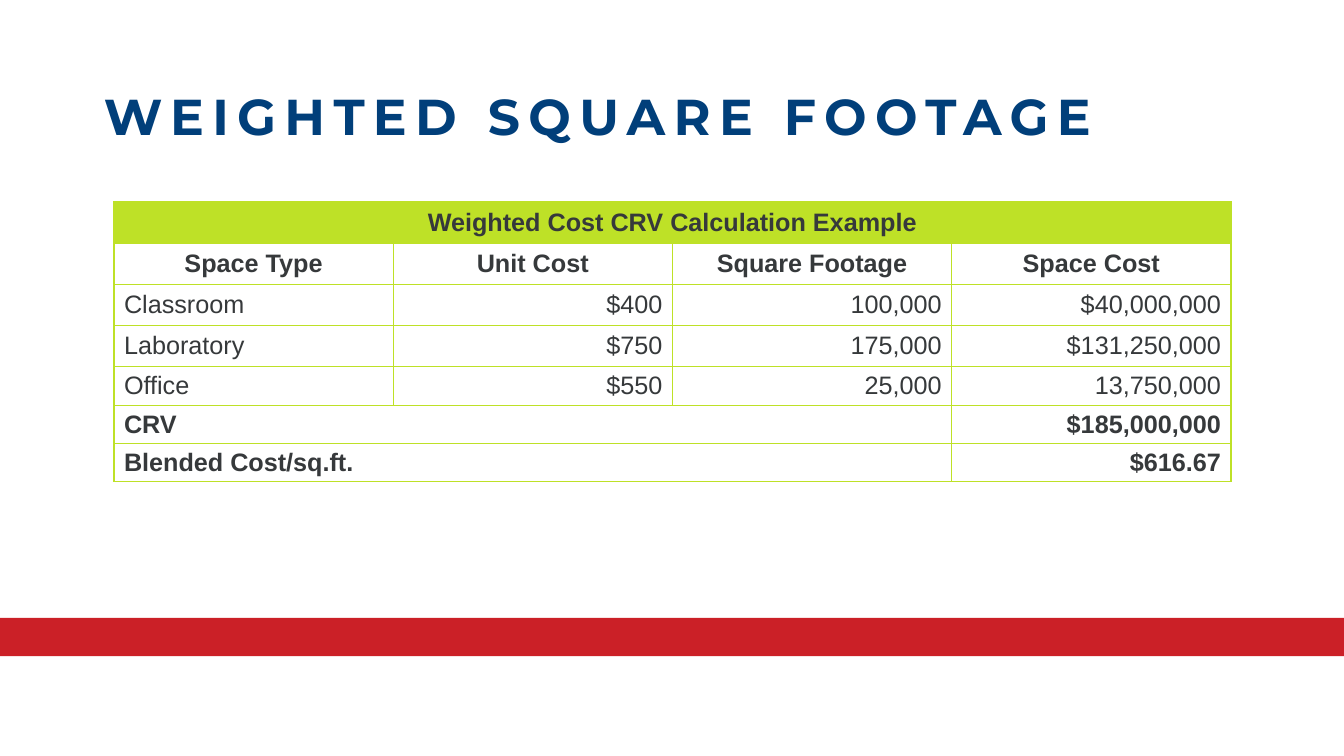
from lxml import etree
from pptx import Presentation
from pptx import util as u
from pptx.dml.color import RGBColor
from pptx.enum import shapes, text
from pptx.oxml.ns import qn

PX = 9144  # 100 px to the inch
NAVY = RGBColor(0x01, 0x3F, 0x7A)
RED = RGBColor(0xCB, 0x20, 0x27)
LIME = RGBColor(0xBE, 0xE1, 0x27)
INK = RGBColor(0x36, 0x39, 0x3B)

LEFT, CENTER, RIGHT = text.PP_ALIGN.LEFT, text.PP_ALIGN.CENTER, text.PP_ALIGN.RIGHT
CAPTION = "Weighted Cost CRV Calculation Example"
HEADINGS = ["Space Type", "Unit Cost", "Square Footage", "Space Cost"]
SPACES = [
    ["Classroom", "$400", "100,000", "$40,000,000"],
    ["Laboratory", "$750", "175,000", "$131,250,000"],
    ["Office", "$550", "25,000", "13,750,000"],
]
TOTALS = [("CRV", "$185,000,000"), ("Blended Cost/sq.ft.", "$616.67")]
ROW_HEIGHTS = [41, 41, 41, 41, 38, 38, 38]


def px(*lengths):
    return [u.Emu(n * PX) for n in lengths]


def add_bar(s, box):
    bar = s.shapes.add_shape(shapes.MSO_SHAPE.RECTANGLE, *px(*box))
    bar.shadow.inherit = False
    bar.fill.solid()
    bar.fill.fore_color.rgb = RED
    bar.line.fill.background()


def fill_title(s, box, wording):
    title = s.shapes.title
    title.left, title.top, title.width, title.height = px(*box)
    tf = title.text_frame
    tf.text = wording
    tf.word_wrap = True
    tf.auto_size = text.MSO_AUTO_SIZE.NONE
    tf.vertical_anchor = text.MSO_ANCHOR.MIDDLE
    p = tf.paragraphs[0]
    p.alignment = LEFT
    p.line_spacing = 0.9
    r = p.runs[0]
    r.font.name, r.font.size, r.font.bold = "Montserrat", u.Pt(36), True
    r.font.color.rgb = NAVY
    r.font._element.set("spc", "600")


def set_borders(cell):
    """Draw a thin lime line on all four sides; lines come before the fill."""
    tc_pr = cell._tc.get_or_add_tcPr()
    for i, side in enumerate(("lnL", "lnR", "lnT", "lnB")):
        ln = etree.Element(qn(f"a:{side}"), w=str(u.Pt(1)))
        fill = etree.SubElement(ln, qn("a:solidFill"))
        etree.SubElement(fill, qn("a:srgbClr"), val=str(LIME))
        tc_pr.insert(i, ln)


def write_cell(cell, wording, align, bold):
    cell.text = wording
    p = cell.text_frame.paragraphs[0]
    p.alignment = align
    font = p.runs[0].font
    font.name, font.size, font.bold = "Arial", u.Pt(18), bold
    font.color.rgb = INK


def add_cost_table(s, box):
    columns = len(HEADINGS)
    table = s.shapes.add_table(len(ROW_HEIGHTS), columns, *px(*box)).table
    table.first_row = table.horz_banding = False
    for column in table.columns:
        column.width = px(box[2] // columns)[0]
    for row, height in zip(table.rows, ROW_HEIGHTS):
        row.height = px(height)[0]
    for cell in table.iter_cells():
        cell.margin_top = cell.margin_bottom = px(4)[0]
        cell.vertical_anchor = text.MSO_ANCHOR.MIDDLE
        cell.fill.background()
        set_borders(cell)

    caption = table.cell(0, 0)
    caption.merge(table.cell(0, columns - 1))
    caption.fill.solid()
    caption.fill.fore_color.rgb = LIME
    write_cell(caption, CAPTION, CENTER, True)
    for c, heading in enumerate(HEADINGS):
        write_cell(table.cell(1, c), heading, CENTER, True)
    for r, values in enumerate(SPACES, 2):
        for c, value in enumerate(values):
            write_cell(table.cell(r, c), value, RIGHT if c else LEFT, False)
    for r, (label, value) in enumerate(TOTALS, 2 + len(SPACES)):
        table.cell(r, 0).merge(table.cell(r, columns - 2))
        write_cell(table.cell(r, 0), label, LEFT, True)
        write_cell(table.cell(r, columns - 1), value, RIGHT, True)


def main():
    prs = Presentation()
    prs.slide_width, prs.slide_height = px(1333, 750)
    s = prs.slides.add_slide(prs.slide_layouts[5])
    add_bar(s, (0, 613, 1333, 38))
    fill_title(s, (93, 83, 1107, 71), "WEIGHTED SQUARE FOOTAGE")
    add_cost_table(s, (113, 200, 1108, sum(ROW_HEIGHTS)))
    prs.save("out.pptx")


if __name__ == "__main__":
    main()
